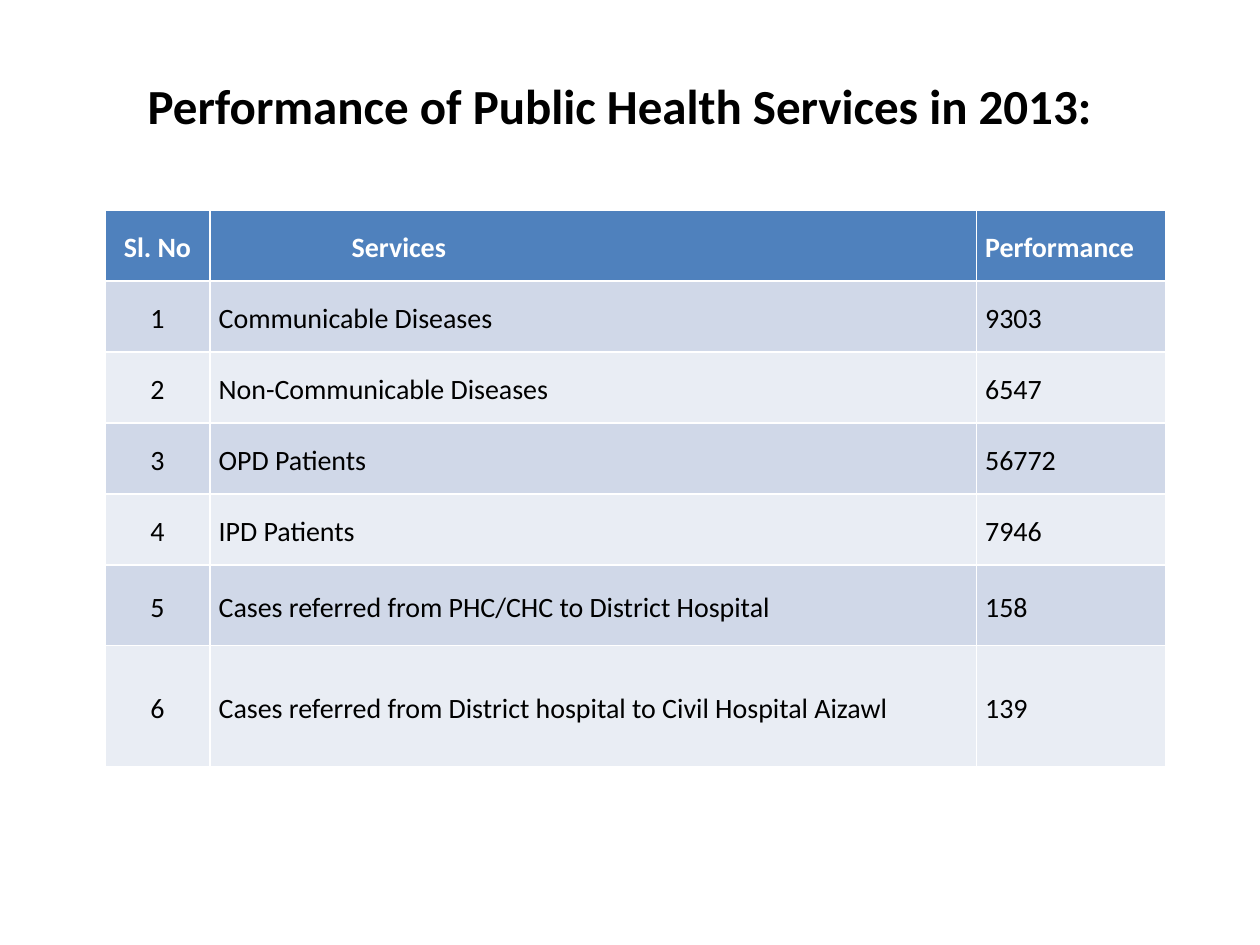
"""Build the slide on the performance of public health services in 2013."""
from pptx import Presentation
from pptx.dml.color import RGBColor
from pptx.enum.text import MSO_ANCHOR as Anchor, PP_ALIGN as Align
from pptx.util import Pt


def style_font(font, size, color, bold):
    font.name = "Calibri"
    font.size = Pt(size)
    font.bold = bold
    font.color.rgb = RGBColor.from_string(color)


deck = Presentation()
deck.slide_width, deck.slide_height = Pt(720), Pt(540)
page = deck.slides.add_slide(deck.slide_layouts[5])

title = page.shapes.title
title.left, title.top, title.width, title.height = Pt(48), Pt(35), Pt(612), Pt(50)
title.text_frame.text = "Performance of Public Health Services in 2013:"
title.text_frame.vertical_anchor = Anchor.MIDDLE
title_para = title.text_frame.paragraphs[0]
title_para.alignment = Align.CENTER
style_font(title_para.runs[0].font, 28, "000000", True)

services = [
    ("Communicable Diseases", "9303"),
    ("Non-Communicable Diseases", "6547"),
    ("OPD Patients", "56772"),
    ("IPD Patients", "7946"),
    ("Cases referred from PHC/CHC to District Hospital", "158"),
    ("Cases referred from District hospital to Civil Hospital Aizawl", "139"),
]
rows = [("Sl. No", "Services", "Performance")]
rows += [(str(number), *service) for number, service in enumerate(services, 1)]
column_widths = [60, 438, 108]
row_heights = [40.6] * 5 + [46, 69]

table = page.shapes.add_table(
    len(rows), len(column_widths), Pt(60), Pt(120),
    Pt(sum(column_widths)), Pt(sum(row_heights))).table
for column, width in zip(table.columns, column_widths):
    column.width = Pt(width)
for row, height in zip(table.rows, row_heights):
    row.height = Pt(height)

for row_index, values in enumerate(rows):
    is_header = row_index == 0
    band = "D0D8E8" if row_index % 2 else "E9EDF4"
    for column_index, value in enumerate(values):
        cell = table.cell(row_index, column_index)
        cell.fill.solid()
        cell.fill.fore_color.rgb = RGBColor.from_string("4F81BD" if is_header else band)
        cell.vertical_anchor = Anchor.MIDDLE
        cell.margin_left = cell.margin_right = Pt(5)
        cell.margin_top = cell.margin_bottom = Pt(0)
        para = cell.text_frame.paragraphs[0]
        para.text = value
        para.alignment = Align.LEFT if column_index else Align.CENTER
        para.line_spacing = 1.15
        style_font(para.runs[0].font, 16, "FFFFFF" if is_header else "000000", is_header)
table.cell(0, 1).margin_left = Pt(81)

deck.save("out.pptx")
